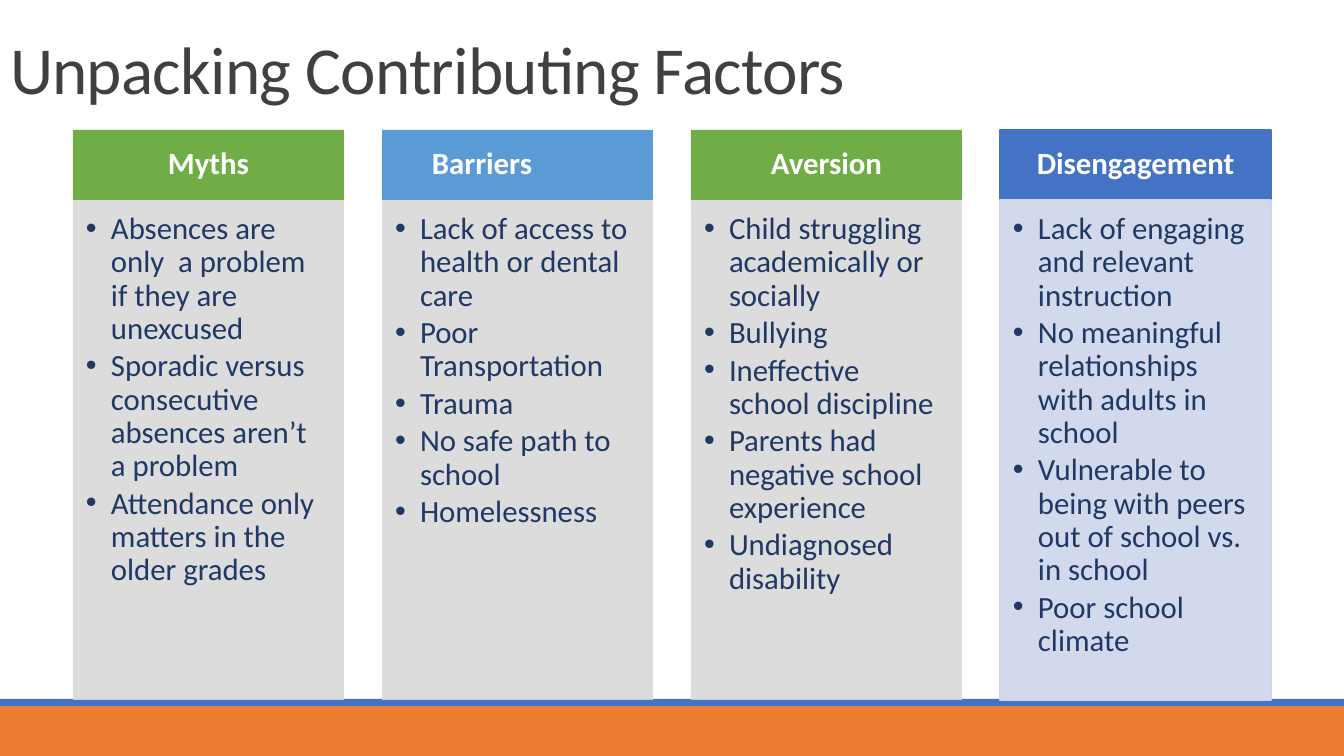
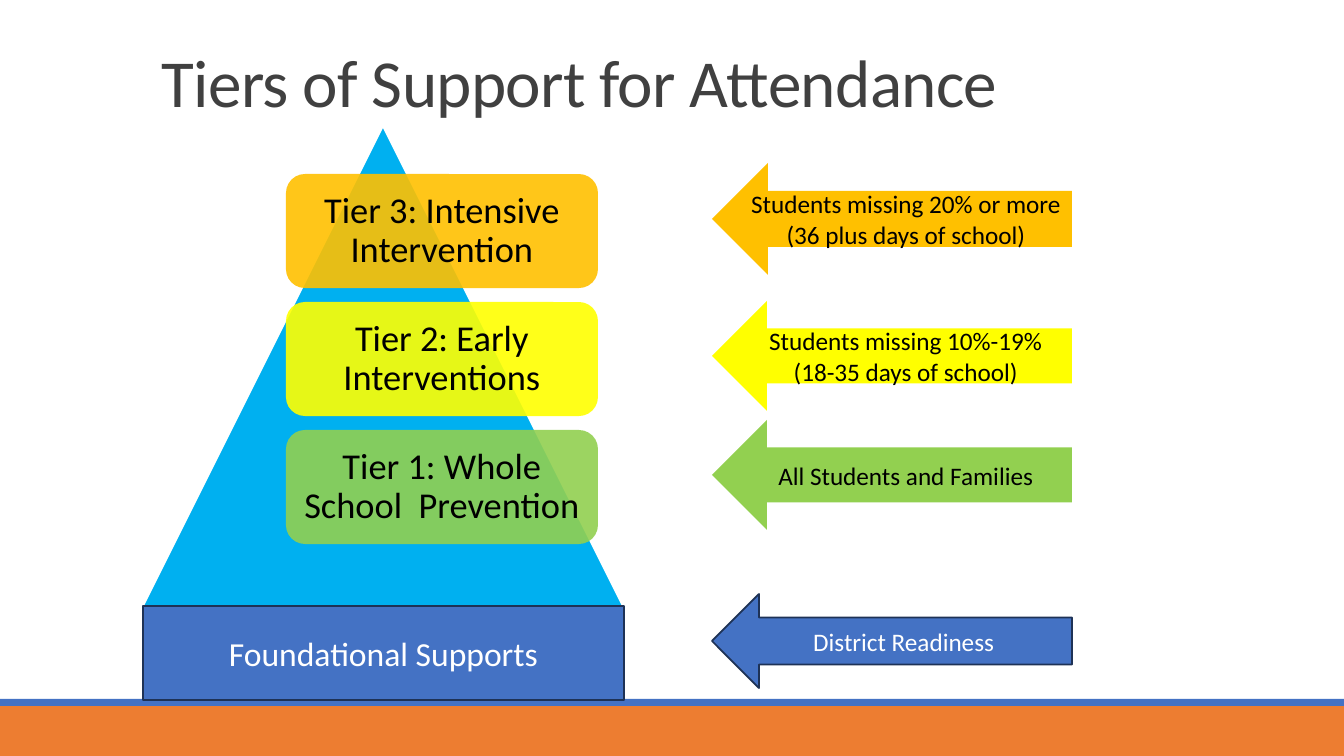
from dataclasses import dataclass

from lxml.etree import SubElement
from pptx import Presentation
from pptx.dml.color import RGBColor
from pptx.enum.shapes import MSO_SHAPE
from pptx.enum.text import MSO_ANCHOR, PP_ALIGN
from pptx.oxml.ns import qn
from pptx.util import Emu, Pt


@dataclass(frozen=True)
class Theme:
    font: str = "Calibri"
    title_color: str = "404040"
    body_color: str = "203864"
    white: str = "FFFFFF"
    black: str = "000000"
    orange: str = "ED7D31"
    blue: str = "4472C4"
    light_blue: str = "5B9BD5"
    green: str = "70AD47"
    gray: str = "D9D9D9"
    pale_blue: str = "CFD5EA"
    outline: str = "1E3256"
    pyramid: str = "00B0F0"
    amber: str = "FFC000"
    yellow: str = "FFFF00"
    lime: str = "92D050"
    title_size: int = 48
    tier_size: int = 26
    base_size: int = 24
    column_size: int = 22
    arrow_size: int = 18
    line_width: float = 1.25


THEME = Theme()
WIDTH, HEIGHT = 1344, 756
EMU_PER_PX = 914400 / 100.8

# Heading, heading fill, body fill, outlined, right inset of heading, bullets
COLUMNS = [
    ("Myths", THEME.green, THEME.gray, False, 17, [
        "Absences are only  a problem if they are unexcused",
        "Sporadic versus consecutive absences aren’t a problem",
        "Attendance only matters in the older grades",
    ]),
    ("Barriers", THEME.light_blue, THEME.gray, False, 88, [
        "Lack of access to health or dental care",
        "Poor Transportation",
        "Trauma",
        "No safe path to school",
        "Homelessness",
    ]),
    ("Aversion", THEME.green, THEME.gray, False, 17, [
        "Child struggling academically or socially",
        "Bullying",
        "Ineffective school discipline",
        "Parents had negative school experience",
        "Undiagnosed disability",
    ]),
    ("Disengagement", THEME.blue, THEME.pale_blue, True, 17, [
        "Lack of engaging and relevant instruction",
        "No meaningful relationships with adults in school",
        "Vulnerable to being with peers out of school vs. in school",
        "Poor school climate",
    ]),
]

TIERS = [
    ("Tier 3: Intensive Intervention", THEME.amber),
    ("Tier 2: Early Interventions", THEME.yellow),
    ("Tier 1: Whole School  Prevention", THEME.lime),
]

# Text, fill, text color, outline, top, height
ARROWS = [
    ("Students missing 20% or more (36 plus days of school)",
     THEME.amber, THEME.black, None, 163, 112),
    ("Students missing 10%-19% (18-35 days of school)",
     THEME.yellow, THEME.black, None, 301, 110),
    ("All Students and Families",
     THEME.lime, THEME.black, None, 420, 110),
    ("District Readiness",
     THEME.blue, THEME.white, THEME.outline, 594, 94),
]


def px(value):
    return Emu(round(value * EMU_PER_PX))


def add_box(slide, preset, box, fill, line=None, opacity=100):
    shape = slide.shapes.add_shape(preset, *map(px, box))
    shape.shadow.inherit = False
    shape.fill.solid()
    shape.fill.fore_color.rgb = RGBColor.from_string(fill)
    if opacity < 100:
        color = shape._element.spPr.find(qn("a:solidFill")).find(qn("a:srgbClr"))
        SubElement(color, qn("a:alpha"), val=str(opacity * 1000))
    if line:
        shape.line.color.rgb = RGBColor.from_string(line)
        shape.line.width = Pt(THEME.line_width)
    else:
        shape.line.fill.background()
    return shape


def write(shape, *texts, size, color, bold=False, align=PP_ALIGN.CENTER,
          anchor=MSO_ANCHOR.MIDDLE, insets=(10, 5, 10, 5), line_spacing=1.0,
          space_after=0, bullets=False, tracking=None):
    """Fill a shape with one paragraph per text; insets are left, top, right, bottom."""
    frame = shape.text_frame
    frame.word_wrap = True
    frame.vertical_anchor = anchor
    (frame.margin_left, frame.margin_top,
     frame.margin_right, frame.margin_bottom) = map(px, insets)
    for index, text in enumerate(texts):
        paragraph = frame.add_paragraph() if index else frame.paragraphs[0]
        paragraph.alignment = align
        paragraph.line_spacing = line_spacing
        paragraph.space_after = Pt(space_after)
        if bullets:
            properties = paragraph._p.get_or_add_pPr()
            properties.set("marL", str(px(25)))
            properties.set("indent", str(-px(25)))
            SubElement(properties, qn("a:buFont"), typeface="Arial")
            SubElement(properties, qn("a:buChar"), char="•")
        run = paragraph.add_run()
        run.text = text
        run.font.name = THEME.font
        run.font.size = Pt(size)
        run.font.bold = bold
        run.font.color.rgb = RGBColor.from_string(color)
        if tracking is not None:
            run._r.get_or_add_rPr().set("spc", str(tracking))


def add_titled_slide(presentation, title, box, align):
    """Add a blank slide with the shared footer bands and title style."""
    slide = presentation.slides.add_slide(presentation.slide_layouts[6])
    add_box(slide, MSO_SHAPE.RECTANGLE, (0, 706, WIDTH, 50), THEME.orange)
    add_box(slide, MSO_SHAPE.RECTANGLE, (0, 699, WIDTH, 7), THEME.blue)
    write(slide.shapes.add_textbox(*map(px, box)), title,
          size=THEME.title_size, color=THEME.title_color, align=align,
          anchor=MSO_ANCHOR.BOTTOM, line_spacing=0.85, tracking=-50)
    return slide


def build_factors(presentation):
    slide = add_titled_slide(presentation, "Unpacking Contributing Factors",
                             (0, 17, 969, 96), PP_ALIGN.LEFT)
    left, pitch, width, top, heading_height, body_height = 73, 309, 271, 130, 70, 500
    for index, column in enumerate(COLUMNS):
        heading, heading_fill, body_fill, outlined, right_inset, bullets = column
        x = left + index * pitch
        heading_box = add_box(slide, MSO_SHAPE.RECTANGLE,
                              (x, top, width, heading_height), heading_fill,
                              line=heading_fill if outlined else None)
        write(heading_box, heading, size=THEME.column_size, color=THEME.white,
              bold=True, insets=(17, 10, right_inset, 10), line_spacing=0.9)
        body_box = add_box(slide, MSO_SHAPE.RECTANGLE,
                           (x, top + heading_height, width, body_height), body_fill,
                           line=body_fill if outlined else None, opacity=90)
        write(body_box, *bullets, size=THEME.column_size, color=THEME.body_color,
              align=PP_ALIGN.LEFT, anchor=MSO_ANCHOR.TOP, insets=(13, 13, 17, 19),
              line_spacing=0.9, space_after=3, bullets=True)


def build_tiers(presentation):
    slide = add_titled_slide(presentation, "Tiers of Support for Attendance",
                             (0, 35, 1159, 91), PP_ALIGN.CENTER)
    add_box(slide, MSO_SHAPE.ISOSCELES_TRIANGLE, (143, 126, 480, 480),
            THEME.pyramid, line=THEME.white)
    for index, (text, fill) in enumerate(TIERS):
        tier = add_box(slide, MSO_SHAPE.ROUNDED_RECTANGLE,
                       (286, 174 + index * 128, 312, 114), fill, opacity=90)
        write(tier, text, size=THEME.tier_size, color=THEME.black,
              insets=(11, 11, 11, 11), line_spacing=0.9)
    base = add_box(slide, MSO_SHAPE.RECTANGLE, (143, 606, 481, 94),
                   THEME.blue, line=THEME.outline)
    write(base, "Foundational Supports", size=THEME.base_size, color=THEME.white)
    for text, fill, color, outline, top, height in ARROWS:
        arrow = add_box(slide, MSO_SHAPE.LEFT_ARROW, (712, top, 360, height),
                        fill, line=outline)
        write(arrow, text, size=THEME.arrow_size, color=color)


def main():
    presentation = Presentation()
    presentation.slide_width = px(WIDTH)
    presentation.slide_height = px(HEIGHT)
    build_factors(presentation)
    build_tiers(presentation)
    presentation.save("out.pptx")


if __name__ == "__main__":
    main()
